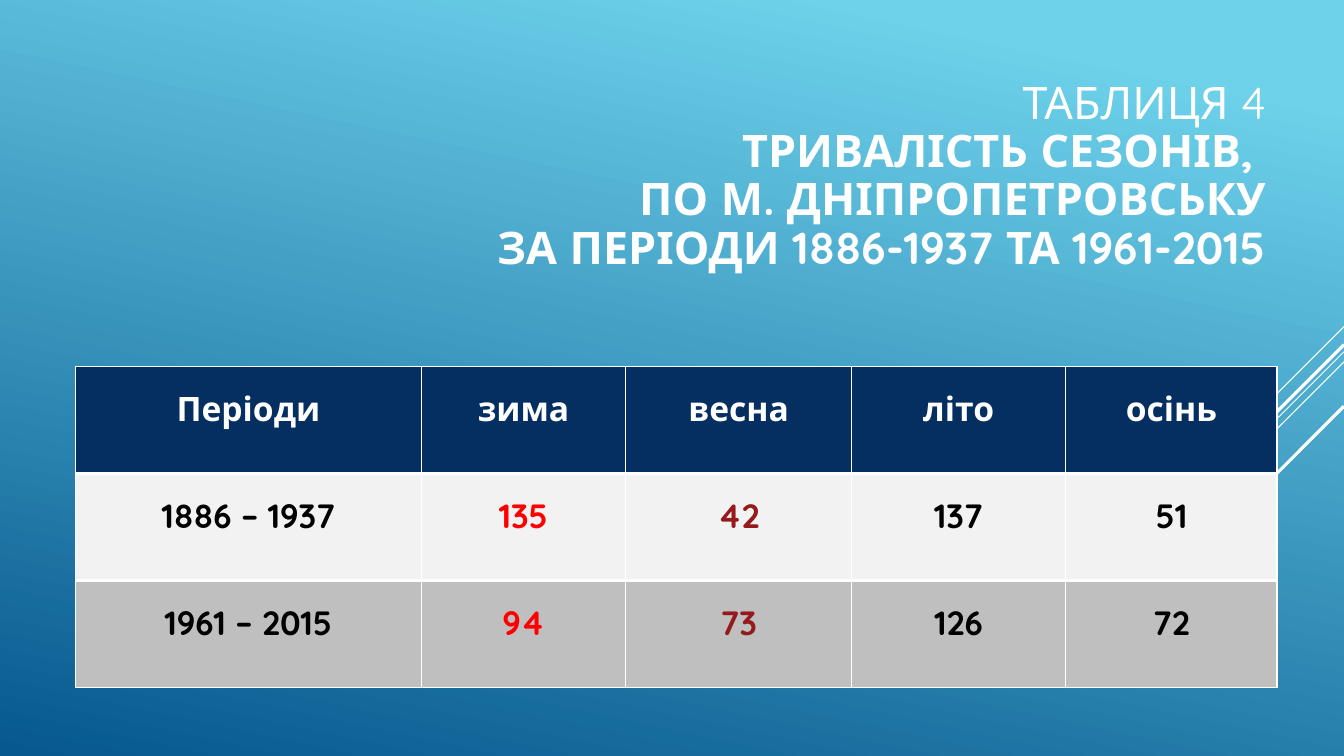
from typing import NamedTuple, Optional

import lxml.etree
import pptx
import pptx.dml.color
import pptx.enum.shapes
import pptx.enum.text
import pptx.oxml.ns
import pptx.util

Pt = pptx.util.Pt
RGBColor = pptx.dml.color.RGBColor
Align = pptx.enum.text.PP_ALIGN
qn = pptx.oxml.ns.qn

WHITE = RGBColor(0xFF, 0xFF, 0xFF)
BLACK = RGBColor(0x00, 0x00, 0x00)
RED = RGBColor(0xFF, 0x00, 0x00)
DARK_RED = RGBColor(0x94, 0x1A, 0x1B)
NAVY = RGBColor(0x05, 0x2F, 0x61)
LIGHT_GRAY = RGBColor(0xF2, 0xF2, 0xF2)
MID_GRAY = RGBColor(0xBF, 0xBF, 0xBF)
SKY = RGBColor(0x6E, 0xD2, 0xEB)
DEEP_BLUE = RGBColor(0x06, 0x58, 0x8E)

FONT = "Quicksand"
SLIDE_WIDTH, SLIDE_HEIGHT = 960, 540
THIN, THICK = 1, 3


class Ray(NamedTuple):
    """Diagonal from the right edge, going down and left by the same length."""
    top: float
    length: float
    weight: float


class SeasonRow(NamedTuple):
    texts: tuple[str, ...]
    colors: tuple[RGBColor, ...]
    fill: RGBColor


RAYS = [
    Ray(233.3, 72, 0.75),
    Ray(251.3, 234.7, 0.75),
    Ray(258.5, 149, 0.75),
    Ray(246.2, 137.5, 2.25),
    Ray(290.2, 100, 2.25),
]
TITLE_LINES = [
    "ТАБЛИЦЯ 4",
    "ТРИВАЛІСТЬ СЕЗОНІВ, ",
    "ПО М. ДНІПРОПЕТРОВСЬКУ",
    "ЗА ПЕРІОДИ 1886-1937 ТА 1961-2015",
]
VALUE_COLORS = (BLACK, RED, DARK_RED, BLACK, BLACK)
SEASON_ROWS = [
    SeasonRow(("Періоди", "зима", "весна", "літо", "осінь"), (WHITE,) * 5, NAVY),
    SeasonRow(("1886 – 1937", "135", "42", "137", "51"), VALUE_COLORS, LIGHT_GRAY),
    SeasonRow(("1961 – 2015", "94", "73", "126", "72"), VALUE_COLORS, MID_GRAY),
]
COLUMN_WIDTHS = [247, 146, 161.3, 153, 151]
ROW_HEIGHT = 76.4


def write_text(paragraph, text: str, *, size: float, color: RGBColor,
               bold: bool = False, align: Optional[Align] = None,
               line_spacing: Optional[float] = None) -> None:
    run = paragraph.add_run()
    run.text = text
    run.font.name = FONT
    run.font.size = Pt(size)
    run.font.bold = bold
    run.font.color.rgb = color
    if align is not None:
        paragraph.alignment = align
    if line_spacing is not None:
        paragraph.line_spacing = line_spacing


def paint_background(slide) -> None:
    fill = slide.background.fill
    fill.gradient()
    fill.gradient_angle = 258
    for stop, position, color in zip(fill.gradient_stops, (0.1, 1), (SKY, DEEP_BLUE)):
        stop.position = position
        stop.color.rgb = color


def draw_ray(slide, ray: Ray) -> None:
    connector = slide.shapes.add_connector(
        pptx.enum.shapes.MSO_CONNECTOR.STRAIGHT,
        Pt(SLIDE_WIDTH), Pt(ray.top),
        Pt(SLIDE_WIDTH - ray.length), Pt(ray.top + ray.length))
    connector.line.color.rgb = WHITE
    connector.line.width = Pt(ray.weight)
    properties = connector.element.find(qn("p:spPr"))
    lxml.etree.SubElement(properties, qn("a:effectLst"))


def draw_title(slide) -> None:
    shape = slide.shapes.add_textbox(Pt(53.3), Pt(48.2), Pt(858.2), Pt(195.1))
    frame = shape.text_frame
    frame.word_wrap = True
    frame.vertical_anchor = pptx.enum.text.MSO_ANCHOR.MIDDLE
    frame.margin_bottom = Pt(42)
    paragraph = frame.paragraphs[0]
    for index, line in enumerate(TITLE_LINES):
        if index:
            paragraph.add_line_break()
        write_text(paragraph, line, size=32, color=WHITE, bold=index > 0,
                   align=Align.RIGHT, line_spacing=0.9)


def set_borders(cell, top: float, bottom: float) -> None:
    properties = cell._tc.get_or_add_tcPr()
    weights = {"a:lnL": THIN, "a:lnR": THIN, "a:lnT": top, "a:lnB": bottom}
    # Border lines come before the fill in the cell properties
    for index, (tag, weight) in enumerate(weights.items()):
        line = lxml.etree.Element(qn(tag), w=str(Pt(weight)))
        solid = lxml.etree.SubElement(line, qn("a:solidFill"))
        lxml.etree.SubElement(solid, qn("a:srgbClr"), val=str(WHITE))
        properties.insert(index, line)


def draw_season_table(slide) -> None:
    row_count = len(SEASON_ROWS)
    table = slide.shapes.add_table(
        row_count, len(COLUMN_WIDTHS), Pt(54), Pt(261.8),
        Pt(sum(COLUMN_WIDTHS)), Pt(ROW_HEIGHT * row_count)).table
    table.first_row = False
    table.horz_banding = False
    for column, width in zip(table.columns, COLUMN_WIDTHS):
        column.width = Pt(width)
    for row_index, season_row in enumerate(SEASON_ROWS):
        table.rows[row_index].height = Pt(ROW_HEIGHT)
        top = THICK if row_index else THIN
        bottom = THICK if row_index < row_count - 1 else THIN
        for column_index, (text, color) in enumerate(zip(season_row.texts, season_row.colors)):
            cell = table.cell(row_index, column_index)
            cell.margin_left = cell.margin_right = Pt(5)
            cell.margin_top = cell.margin_bottom = Pt(0)
            cell.fill.solid()
            cell.fill.fore_color.rgb = season_row.fill
            set_borders(cell, top, bottom)
            write_text(cell.text_frame.paragraphs[0], text, size=24, color=color,
                       bold=True, align=Align.CENTER, line_spacing=1.5)


def main() -> None:
    presentation = pptx.Presentation()
    presentation.slide_width = Pt(SLIDE_WIDTH)
    presentation.slide_height = Pt(SLIDE_HEIGHT)
    slide = presentation.slides.add_slide(presentation.slide_layouts[6])
    paint_background(slide)
    # Diagonal rays lie behind the table
    for ray in RAYS:
        draw_ray(slide, ray)
    draw_title(slide)
    draw_season_table(slide)
    presentation.save("out.pptx")


if __name__ == "__main__":
    main()
